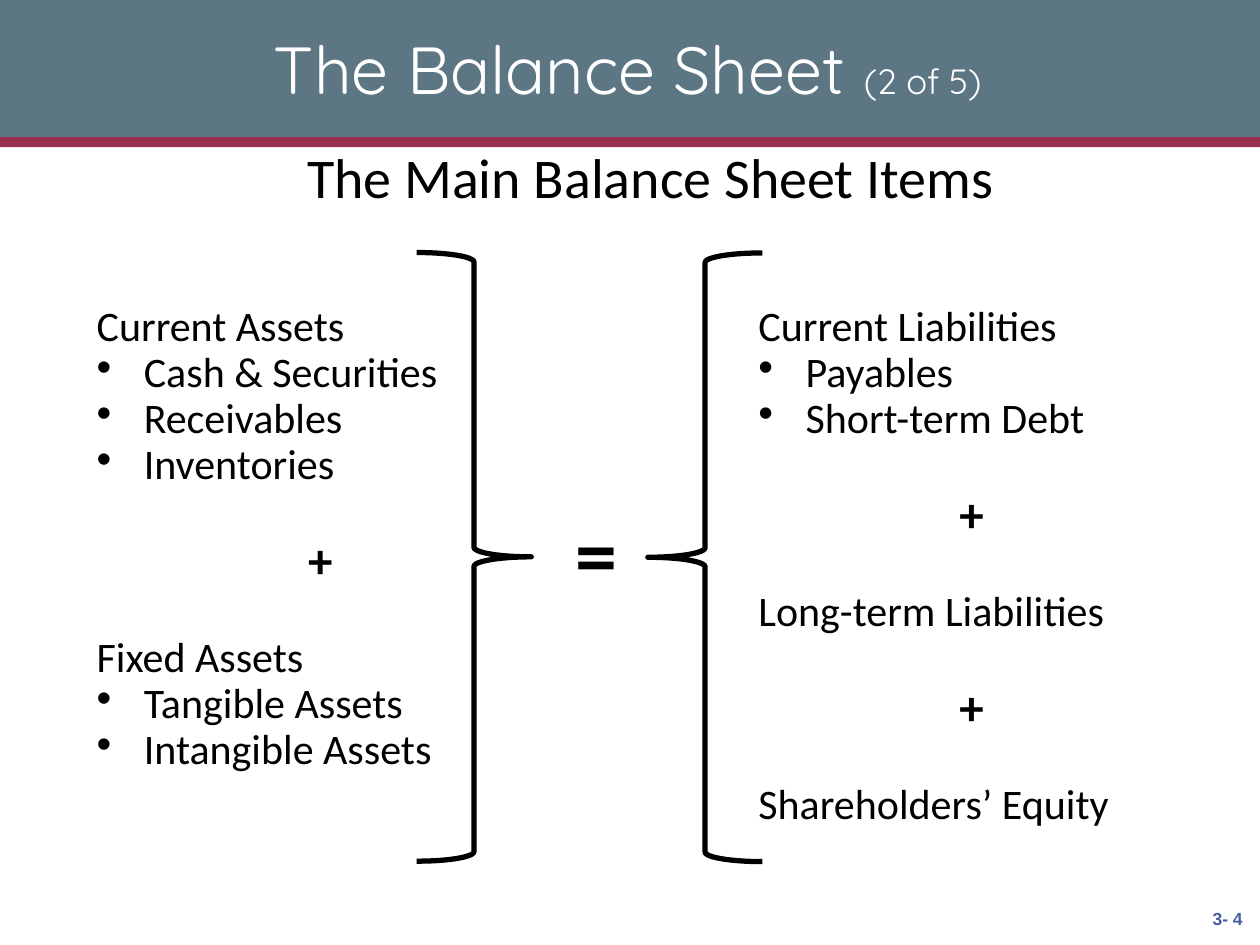
from dataclasses import dataclass

from lxml import etree
from pptx import Presentation
from pptx import util as u
from pptx.dml.color import RGBColor
from pptx.enum import shapes, text
from pptx.oxml.ns import qn

HUES = {"slate": "5C7683", "wine": "992D4F", "blue": "455EA0",
        "white": "FFFFFF", "black": "000000"}
LEFT, MID, RIGHT = text.PP_ALIGN.LEFT, text.PP_ALIGN.CENTER, text.PP_ALIGN.RIGHT
TOP, CENTRE = text.MSO_ANCHOR.TOP, text.MSO_ANCHOR.MIDDLE
GAP = 26.55  # points from one list line to the next
LEAD = 11.95  # points above each list line


@dataclass(frozen=True)
class Box:
    x: float
    y: float
    w: float
    h: float

    def dims(self) -> tuple:
        return tuple(u.Cm(n) for n in (self.x, self.y, self.w, self.h))


@dataclass(frozen=True)
class Font:
    size: float
    name: str = "Calibri"
    hue: str = "black"
    bold: bool = False


@dataclass(frozen=True)
class Group:
    head: str
    items: tuple = ()


@dataclass(frozen=True)
class Side:
    box: Box
    groups: tuple


SIDES = (
    Side(Box(1.7, 4.9, 9.51, 12.29), (
        Group("Current Assets", ("Cash & Securities", "Receivables", "Inventories")),
        Group("Fixed Assets", ("Tangible Assets", "Intangible Assets")))),
    Side(Box(15.04, 4.9, 9.09, 12.47), (
        Group("Current Liabilities", ("Payables", "Short-term Debt")),
        Group("Long-term Liabilities"),
        Group("Shareholders’ Equity"))),
)
BODY, PLUS = Font(24), Font(28, bold=True)


def tint(hue: str) -> RGBColor:
    return RGBColor.from_string(HUES[hue])


def style(run, font: Font) -> None:
    run.font.size = u.Pt(font.size)
    run.font.name = font.name
    run.font.bold = font.bold
    run.font.color.rgb = tint(font.hue)


def band(slide, box: Box, hue: str) -> None:
    bar = slide.shapes.add_shape(shapes.MSO_SHAPE.RECTANGLE, *box.dims())
    bar.shadow.inherit = False
    bar.fill.solid()
    bar.fill.fore_color.rgb = tint(hue)
    bar.line.fill.background()


def brace(slide, box: Box, turn: int = 0) -> None:
    mark = slide.shapes.add_shape(shapes.MSO_SHAPE.LEFT_BRACE, *box.dims())
    mark.shadow.inherit = False
    mark.fill.background()
    mark.line.color.rgb = tint("black")
    mark.line.width = u.Pt(3)
    mark.rotation = turn


def frame(slide, box: Box, wrap: bool = True, anchor=TOP):
    area = slide.shapes.add_textbox(*box.dims()).text_frame
    area.word_wrap = wrap
    area.vertical_anchor = anchor
    return area


def label(slide, box: Box, parts: tuple, align=MID, wrap=True, anchor=TOP) -> None:
    """Write one line made of (words, font) parts."""
    line = frame(slide, box, wrap, anchor).paragraphs[0]
    line.alignment = align
    for words, font in parts:
        run = line.add_run()
        run.text = words
        style(run, font)


def bullet(line) -> None:
    props = line._p.get_or_add_pPr()
    props.set("marL", str(u.Cm(0.95)))
    props.set("indent", str(-u.Cm(0.95)))
    etree.SubElement(props, qn("a:buFont")).set("typeface", "Arial")
    etree.SubElement(props, qn("a:buChar")).set("char", "•")


def column(slide, side: Side) -> None:
    """List the groups of one side, with a plus sign between them."""
    area = frame(slide, side.box)
    area.margin_top = u.Cm(1.57)

    def add(words: str, font: Font, space: float, align=LEFT):
        line = area.add_paragraph() if area.text else area.paragraphs[0]
        line.text = words
        line.alignment = align
        line.line_spacing = 0.5
        line.space_before = u.Pt(space)
        style(line.runs[0], font)
        return line

    for n, group in enumerate(side.groups):
        if n:
            add("+", PLUS, GAP + LEAD + 2, MID)
        add(group.head, BODY, GAP + LEAD if n else 0)
        for item in group.items:
            bullet(add(item, BODY, LEAD))


def main() -> None:
    deck = Presentation()
    deck.slide_width, deck.slide_height = u.Cm(25.4), u.Cm(19.05)
    slide = deck.slides.add_slide(deck.slide_layouts[6])

    band(slide, Box(0, 2.76, 25.4, 0.21), "wine")
    band(slide, Box(0, 0, 25.4, 2.76), "slate")
    label(slide, Box(24.03, 17.98, 1.27, 1.07),
          (("3- 4", Font(10, "Arial", "blue", True)),), RIGHT, False, CENTRE)
    label(slide, Box(0.64, 0.2, 24.03, 2.34),
          (("The Balance Sheet ", Font(38, "Quicksand", "white")),
           ("(2 of 5)", Font(20, "Quicksand", "white"))), anchor=CENTRE)
    label(slide, Box(0.43, 2.74, 25.37, 1.63),
          (("The Main Balance Sheet Items", Font(32)),))
    for side in SIDES:
        column(slide, side)
    label(slide, Box(11.35, 9.98, 1.47, 2.29), (("=", Font(48, bold=True)),), LEFT)
    brace(slide, Box(8.4, 5.09, 2.31, 12.27), 180)
    brace(slide, Box(13.06, 5.1, 2.31, 12.27))

    deck.save("out.pptx")


if __name__ == "__main__":
    main()
